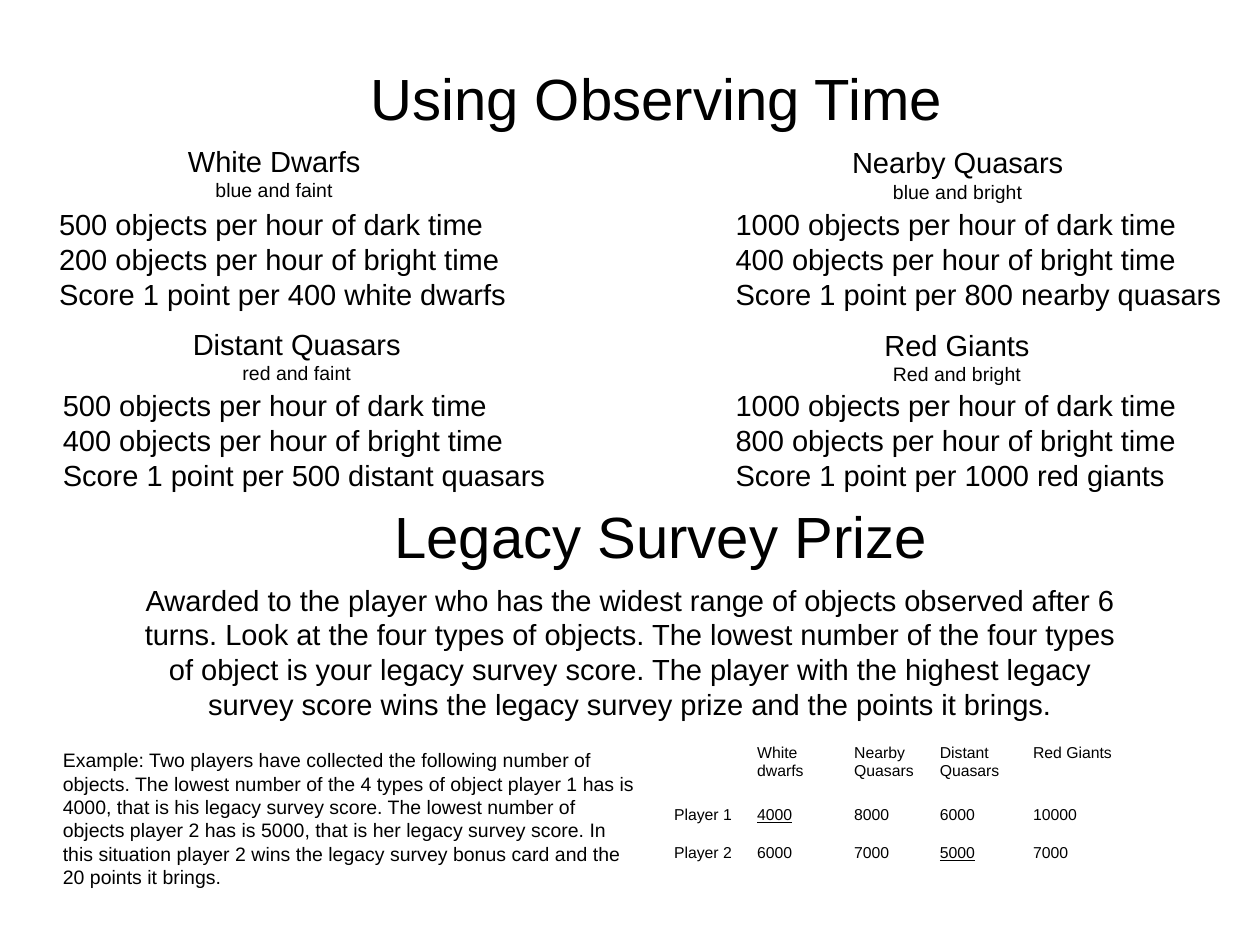
from pptx import Presentation
from pptx import util as u
from pptx.dml import color
from pptx.enum import text

FONT = "Arial"
BLACK = "000000"
HEADING, BODY, SMALL, CELL = 33.2, 16.6, 11.1, 9

# Name, hint, title box, then rates and rates box
OBJECTS = [
    ("White Dwarfs", "blue and faint", (1.38, 1.09, 1.59, 0.57),
     ("500 objects per hour of dark time",
      "200 objects per hour of bright time",
      "Score 1 point per 400 white dwarfs"), (0.37, 1.59, 3.79, 0.94)),
    ("Nearby Quasars", "blue and bright", (6.65, 1.1, 1.9, 0.57),
     ("1000 objects per hour of dark time",
      "400 objects per hour of bright time",
      "Score 1 point per 800 nearby quasars"), (5.74, 1.59, 4.1, 0.94)),
    ("Distant Quasars", "red and faint", (1.42, 2.54, 1.87, 0.57),
     ("500 objects per hour of dark time",
      "400 objects per hour of bright time",
      "Score 1 point per 500 distant quasars"), (0.4, 3.03, 4.08, 0.94)),
    ("Red Giants", "Red and bright", (6.91, 2.55, 1.37, 0.57),
     ("1000 objects per hour of dark time",
      "800 objects per hour of bright time",
      "Score 1 point per 1000 red giants"), (5.74, 3.03, 3.74, 0.94)),
]

PRIZE = (
    "Awarded to the player who has the widest range of objects observed after "
    "6 turns. Look at the four types of objects. The lowest number of the four "
    "types of object is your legacy survey score. The player with the highest "
    "legacy survey score wins the legacy survey prize and the points it brings."
)
EXAMPLE = (
    "Example: Two players have collected the following number of objects. The "
    "lowest number of the 4 types of object player 1 has is 4000, that is his "
    "legacy survey score. The lowest number of objects player 2 has is 5000, "
    "that is her legacy survey score. In this situation player 2 wins the "
    "legacy survey bonus card and the 20 points it brings."
)

COLUMNS = (0.66, 0.77, 0.68, 0.74, 0.88)
ROWS = (0.49, 0.3, 0.37)
SCORES = [
    ("", "White dwarfs", "Nearby Quasars", "Distant Quasars", "Red Giants"),
    ("Player 1", "4000", "8000", "6000", "10000"),
    ("Player 2", "6000", "7000", "5000", "7000"),
]
LOWEST = {(1, 1), (2, 3)}


def rgb(value):
    return color.RGBColor.from_string(value)


def write(para, words, size=BODY, centred=False, underline=False):
    """Put formatted words into a paragraph."""
    para.alignment = text.PP_ALIGN.CENTER if centred else text.PP_ALIGN.LEFT
    span = para.add_run()
    span.text = words
    span.font.name = FONT
    span.font.size = u.Pt(size)
    span.font.color.rgb = rgb(BLACK)
    span.font.underline = underline


def add_text(page, box, lines, sizes=(BODY,), centred=False, wrap=False):
    """Add a text box; the last size serves all remaining lines."""
    frame = page.shapes.add_textbox(*map(u.Inches, box)).text_frame
    frame.word_wrap = wrap
    frame.auto_size = text.MSO_AUTO_SIZE.SHAPE_TO_FIT_TEXT
    for i, line in enumerate(lines):
        para = frame.add_paragraph() if i else frame.paragraphs[0]
        write(para, line, size=sizes[min(i, len(sizes) - 1)], centred=centred)


def add_object(page, name, hint, title_box, rates, rates_box):
    add_text(page, title_box, (name, hint), sizes=(BODY, SMALL), centred=True)
    add_text(page, rates_box, rates)


def add_scores(page, box):
    frame = page.shapes.add_table(len(ROWS), len(COLUMNS), *map(u.Inches, box))
    table = frame.table
    table.first_row = table.horz_banding = False
    for column, width in zip(table.columns, COLUMNS):
        column.width = u.Inches(width)
    for row, height in zip(table.rows, ROWS):
        row.height = u.Inches(height)
    for r, values in enumerate(SCORES):
        for c, value in enumerate(values):
            cell = table.cell(r, c)
            cell.fill.background()
            cell.margin_left = cell.margin_right = u.Inches(0.09)
            cell.margin_top = cell.margin_bottom = u.Inches(0.05)
            if value:
                write(cell.text_frame.paragraphs[0], value, size=CELL,
                      underline=(r, c) in LOWEST)


def main():
    deck = Presentation()
    deck.slide_width, deck.slide_height = u.Inches(10), u.Inches(7.5)
    page = deck.slides.add_slide(deck.slide_layouts[6])

    # Observing time: four kinds of object
    add_text(page, (2.84, 0.45, 4.79, 0.66), ["Using Observing Time"], sizes=(HEADING,))
    for item in OBJECTS:
        add_object(page, *item)

    # Prize: rule, worked example and scores
    add_text(page, (3.03, 3.92, 4.48, 0.66), ["Legacy Survey Prize"], sizes=(HEADING,))
    add_text(page, (1, 4.57, 7.99, 1.22), [PRIZE], centred=True, wrap=True)
    add_scores(page, (5.26, 5.86, sum(COLUMNS), sum(ROWS)))
    add_text(page, (0.4, 5.89, 4.75, 1.22), [EXAMPLE], sizes=(SMALL,), wrap=True)

    deck.save("out.pptx")


if __name__ == "__main__":
    main()
